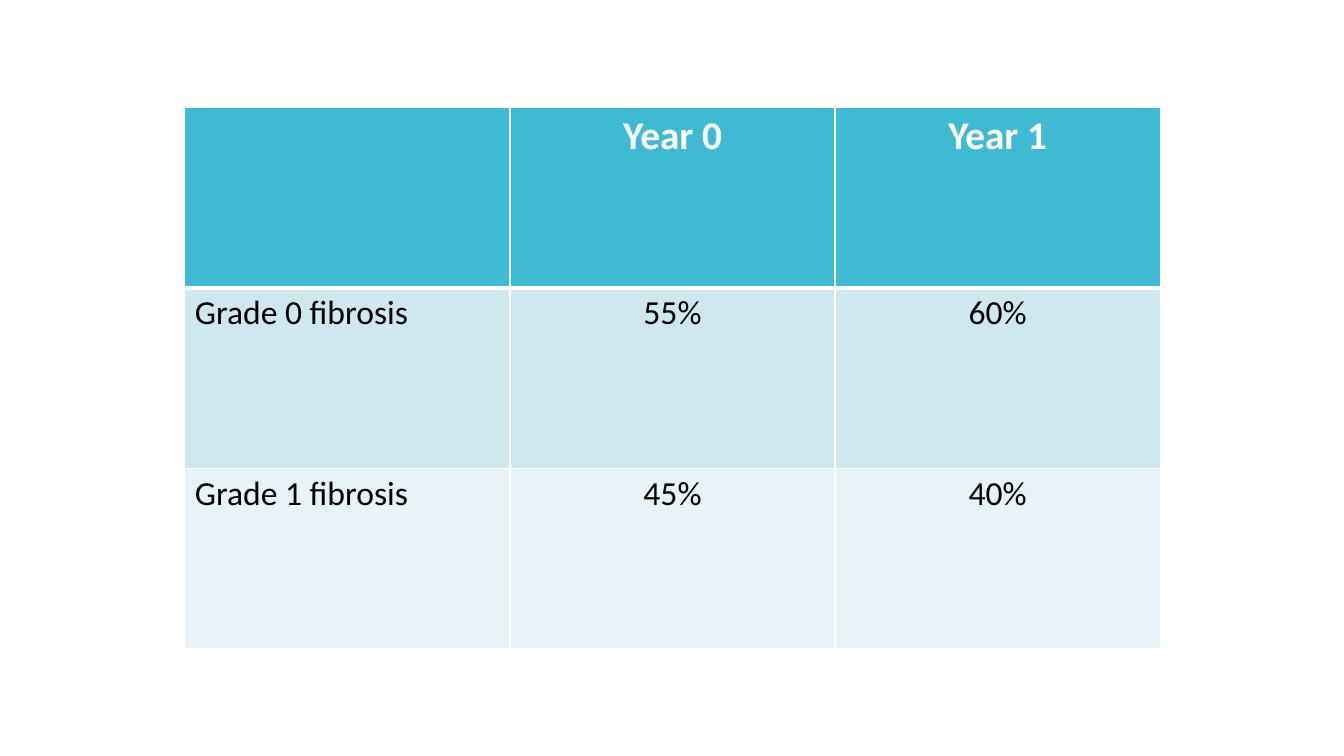
from lxml import etree
from pptx import Presentation
from pptx.dml.color import RGBColor
from pptx.enum.text import PP_ALIGN
from pptx.oxml.ns import qn
from pptx.util import Pt

LEFT, CENTER = PP_ALIGN.LEFT, PP_ALIGN.CENTER
BLANK_LAYOUT = 6

ROWS = [
    ["", "Year 0", "Year 1"],
    ["Grade 0 fibrosis", "55%", "60%"],
    ["Grade 1 fibrosis", "45%", "40%"],
]
ROW_FILLS = ["40BAD2", "CFE7EE", "E8F3F7"]


def color(value):
    return RGBColor.from_string(value)


class SlideBuilder:
    font = "Calibri"
    header_size, body_size = 28, 24
    header_color, body_color = "FFFFFF", "000000"
    border_color = "FFFFFF"
    thin, thick = 1, 3

    def __init__(self, slide):
        self.slide = slide

    def borders(self, cell, row):
        """Outline a cell, with a thick rule between header and body."""
        widths = {
            "L": self.thin,
            "R": self.thin,
            "T": self.thick if row == 1 else self.thin,
            "B": self.thick if row == 0 else self.thin,
        }
        tc_pr = cell._tc.get_or_add_tcPr()
        for side, width in widths.items():
            ln = etree.SubElement(tc_pr, qn(f"a:ln{side}"), w=str(Pt(width)))
            fill = etree.SubElement(ln, qn("a:solidFill"))
            etree.SubElement(fill, qn("a:srgbClr"), val=self.border_color)

    def cell(self, cell, text, row, col):
        header = row == 0
        self.borders(cell, row)
        cell.fill.solid()
        cell.fill.fore_color.rgb = color(ROW_FILLS[row])
        p = cell.text_frame.paragraphs[0]
        p.text = text
        p.alignment = CENTER if col else LEFT
        p.font.name = self.font
        p.font.size = Pt(self.header_size if header else self.body_size)
        p.font.bold = header
        p.font.color.rgb = color(self.header_color if header else self.body_color)

    def table(self, rows, left, top, col_width, row_height):
        n_rows, n_cols = len(rows), len(rows[0])
        table = self.slide.shapes.add_table(
            n_rows, n_cols, Pt(left), Pt(top),
            Pt(col_width * n_cols), Pt(row_height * n_rows)).table
        for i, values in enumerate(rows):
            for j, text in enumerate(values):
                self.cell(table.cell(i, j), text, i, j)


def main():
    prs = Presentation()
    prs.slide_width, prs.slide_height = Pt(960), Pt(540)
    s = prs.slides.add_slide(prs.slide_layouts[BLANK_LAYOUT])
    SlideBuilder(s).table(ROWS, left=132, top=76.5, col_width=232.25, row_height=129)
    prs.save("out.pptx")


if __name__ == "__main__":
    main()
